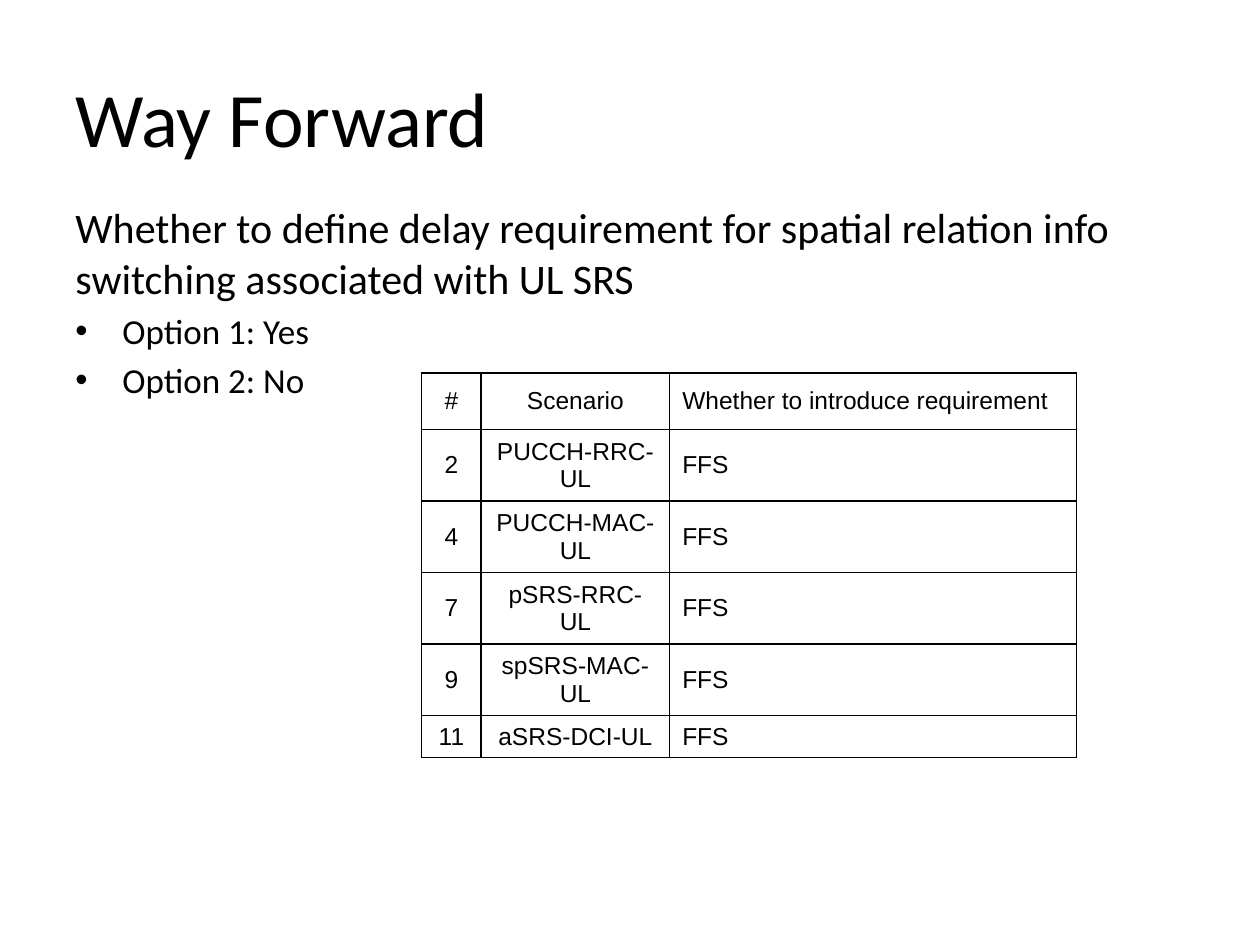
import lxml.etree
import pptx
import pptx.dml.color
import pptx.enum.text
import pptx.oxml.ns
import pptx.util

Cm = pptx.util.Cm
Pt = pptx.util.Pt
qn = pptx.oxml.ns.qn
ALIGN = pptx.enum.text.PP_ALIGN
ANCHOR = pptx.enum.text.MSO_ANCHOR

BLACK = pptx.dml.color.RGBColor(0, 0, 0)

TITLE = "Way Forward"
QUESTION = (
    "Whether to define delay requirement for spatial relation info "
    "switching associated with UL SRS"
)
OPTIONS = ["Option 1: Yes", "Option 2: No"]
HEADER = ("#", "Scenario", "Whether to introduce requirement")
SCENARIOS = [
    ("2", "PUCCH-RRC-UL"),
    ("4", "PUCCH-MAC-UL"),
    ("7", "pSRS-RRC-UL"),
    ("9", "spSRS-MAC-UL"),
    ("11", "aSRS-DCI-UL"),
]
STATUS = "FFS"
COLUMN_WIDTHS = [Cm(1.2), Cm(3.8), Cm(8.2)]
COLUMN_ALIGNMENTS = [ALIGN.CENTER, ALIGN.CENTER, ALIGN.LEFT]
HEADER_HEIGHT = Cm(1.14)
ROW_HEIGHT = Cm(0.74)
MARGIN = Cm(1.27)
CONTENT_WIDTH = Cm(22.86)
BULLET_INDENT = Cm(0.95)


def add_text_frame(slide, top, height, anchor):
    text_box = slide.shapes.add_textbox(MARGIN, top, CONTENT_WIDTH, height)
    text_frame = text_box.text_frame
    text_frame.word_wrap = True
    text_frame.vertical_anchor = anchor
    return text_frame


def add_run(paragraph, text, size, font_name):
    run = paragraph.add_run()
    run.text = text
    run.font.size = Pt(size)
    run.font.name = font_name
    run.font.color.rgb = BLACK


def add_bullet(paragraph):
    properties = paragraph._p.get_or_add_pPr()
    properties.set("marL", str(BULLET_INDENT))
    properties.set("indent", str(-BULLET_INDENT))
    lxml.etree.SubElement(properties, qn("a:buFont"), typeface="Arial")
    lxml.etree.SubElement(properties, qn("a:buChar"), char="•")


def add_borders(cell):
    properties = cell._tc.get_or_add_tcPr()
    for index, side in enumerate(("a:lnL", "a:lnR", "a:lnT", "a:lnB")):
        line = lxml.etree.Element(qn(side), w=str(Pt(1)))
        fill = lxml.etree.SubElement(line, qn("a:solidFill"))
        lxml.etree.SubElement(fill, qn("a:srgbClr"), val=str(BLACK))
        properties.insert(index, line)


def add_scenario_table(slide):
    rows = [HEADER] + [(*scenario, STATUS) for scenario in SCENARIOS]
    heights = [HEADER_HEIGHT] + [ROW_HEIGHT] * len(SCENARIOS)
    table = slide.shapes.add_table(
        len(rows), len(HEADER), Cm(8.5), Cm(7.52), sum(COLUMN_WIDTHS), sum(heights)
    ).table
    for column, width in zip(table.columns, COLUMN_WIDTHS):
        column.width = width
    for row, height, texts in zip(table.rows, heights, rows):
        row.height = height
        for cell, text, alignment in zip(row.cells, texts, COLUMN_ALIGNMENTS):
            cell.fill.background()
            cell.vertical_anchor = ANCHOR.MIDDLE
            add_borders(cell)
            paragraph = cell.text_frame.paragraphs[0]
            paragraph.alignment = alignment
            add_run(paragraph, text, 14, "Arial")
            paragraph.runs[0].font.bold = False


def main():
    presentation = pptx.Presentation()
    presentation.slide_width = Cm(25.4)
    presentation.slide_height = Cm(19.05)
    slide = presentation.slides.add_slide(presentation.slide_layouts[6])

    body = add_text_frame(slide, Cm(3.94), Cm(14.99), ANCHOR.TOP)
    question = body.paragraphs[0]
    question.space_before = Pt(4.8)
    add_run(question, QUESTION, 24, "Calibri")
    for option in OPTIONS:
        paragraph = body.add_paragraph()
        paragraph.space_before = Pt(4)
        add_bullet(paragraph)
        add_run(paragraph, option, 20, "Calibri")

    title = add_text_frame(slide, Cm(0.76), Cm(3.18), ANCHOR.MIDDLE)
    add_run(title.paragraphs[0], TITLE, 44, "Calibri")

    add_scenario_table(slide)
    presentation.save("out.pptx")


if __name__ == "__main__":
    main()
